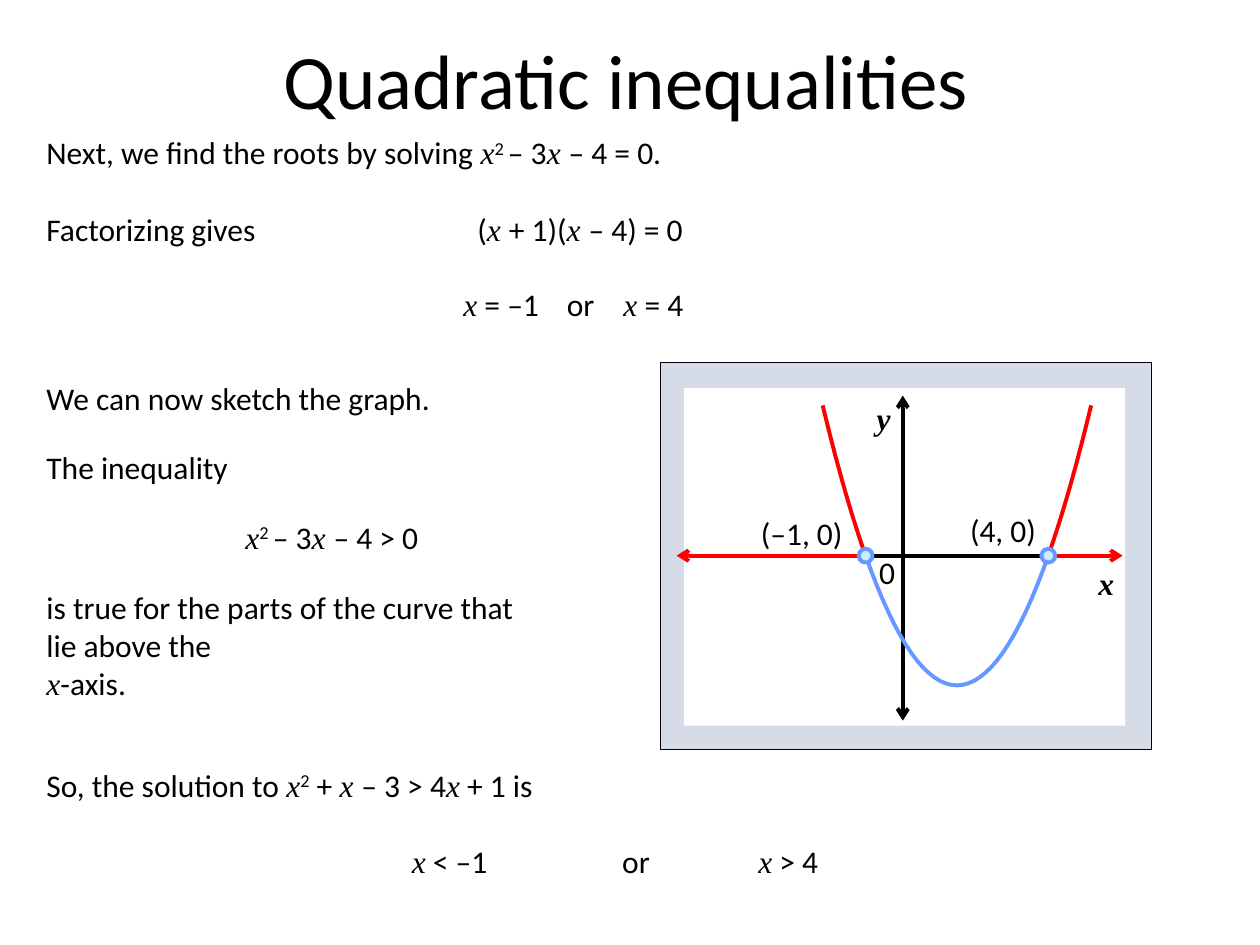
from lxml import etree
from pptx import Presentation
from pptx.dml.color import RGBColor
from pptx.enum.shapes import MSO_CONNECTOR, MSO_SHAPE
from pptx.enum.text import MSO_ANCHOR, PP_ALIGN
from pptx.oxml.ns import qn
from pptx.util import Inches, Pt

STRAIGHT = MSO_CONNECTOR.STRAIGHT
RECTANGLE, OVAL = MSO_SHAPE.RECTANGLE, MSO_SHAPE.OVAL
MIDDLE, CENTER = MSO_ANCHOR.MIDDLE, PP_ALIGN.CENTER

BLACK, WHITE, RED = "000000", "FFFFFF", "FF0000"
BLUE, PALE_BLUE, FRAME_GREY = "6699FF", "CCECFF", "D5DCE7"
STROKE = 2.25

# Content: "|" separates runs, x runs are variables, ^ marks a superscript
TITLE = "Quadratic inequalities"
TEXTS = [  # left, top, width, height, text
    (0.27, 1.01, 9.43, 0.5, "Next, we find the roots by solving |x|^2 |– 3|x |– 4 = 0."),
    (0.27, 1.62, 2.8, 0.5, "Factorizing gives"),
    (3.69, 1.62, 2.62, 0.5, "(|x |+ 1)(|x |– 4) = 0"),
    (3.58, 2.21, 0.9, 0.5, "x| = –1"),
    (4.4, 2.21, 0.5, 0.5, "or"),
    (4.85, 2.21, 0.9, 0.5, "x| = 4"),
    (0.27, 2.96, 4.69, 0.5, "We can now sketch the graph."),
    (0.27, 3.51, 4.57, 0.5, "The inequality"),
    (1.85, 4.06, 2.3, 0.5, "x|^2 |– 3|x |– 4 > 0"),
    (0.27, 4.62, 4.15, 1.3,
     "is true for the parts of the curve that lie above the\nx|-axis."),
    (0.27, 6.03, 6.02, 0.5, "So, the solution to |x|^2| + |x |– 3 > 4|x| + 1 is"),
    (3.17, 6.63, 1.1, 0.5, "x| < –1"),
    (4.84, 6.63, 0.5, 0.5, "or"),
    (5.92, 6.63, 0.91, 0.5, "x| > 4"),
]
GRAPH_LABELS = [  # left, top, width, height, text, bold
    (6.88, 4.34, 0.34, 0.4, "0", False),
    (6.86, 3.12, 0.31, 0.4, "y", True),
    (8.62, 4.43, 0.33, 0.4, "x", True),
    (5.94, 4.03, 0.92, 0.4, "(–1, 0)", False),
    (7.6, 4.01, 0.78, 0.4, "(4, 0)", False),
]

# Graph geometry
AXIS_LEFT, AXIS_RIGHT, AXIS_Y = 5.37, 8.91, 4.41
ROOTS = (6.87, 8.32)
CURVE_LEFT, CURVE_RIGHT, VERTEX_Y = 6.53, 8.66, 5.44
Y_AXIS_X, Y_AXIS_TOP, Y_AXIS_BOTTOM = 7.165, 3.14, 5.72
DOT = 0.11


def color(value):
    return RGBColor.from_string(value)


def write(frame, text, size=18, bold=False, align=None):
    frame.word_wrap = True
    for number, line in enumerate(text.split("\n")):
        para = frame.add_paragraph() if number else frame.paragraphs[0]
        para.alignment = align
        for piece in line.split("|"):
            span = para.add_run()
            span.text = piece.lstrip("^")
            variable = piece.strip() in ("x", "y")
            span.font.name = "Times New Roman" if variable else "Calibri"
            span.font.size = Pt(size)
            span.font.bold = bold
            span.font.italic = variable
            span.font.color.rgb = color(BLACK)
            if piece.startswith("^"):
                span.font._element.set("baseline", "30000")


def add_text(page, left, top, width, height, text, bold=False):
    box = page.shapes.add_textbox(*map(Inches, (left, top, width, height)))
    write(box.text_frame, text, bold=bold)


def style(shape, fill=None, line=None, weight=STROKE):
    shape.shadow.inherit = False
    if fill:
        shape.fill.solid()
        shape.fill.fore_color.rgb = color(fill)
    else:
        shape.fill.background()
    if line:
        shape.line.color.rgb = color(line)
        shape.line.width = Pt(weight)
    else:
        shape.line.fill.background()


def add_preset(page, kind, left, top, width, height, **look):
    style(page.shapes.add_shape(kind, *map(Inches, (left, top, width, height))), **look)


def add_line(page, x1, y1, x2, y2, line, arrows=False):
    connector = page.shapes.add_connector(STRAIGHT, *map(Inches, (x1, y1, x2, y2)))
    connector.line.color.rgb = color(line)
    connector.line.width = Pt(STROKE)
    if arrows:
        outline = connector.line._get_or_add_ln()
        for end in ("a:headEnd", "a:tailEnd"):
            etree.SubElement(outline, qn(end), type="arrow")
    etree.SubElement(connector._element.spPr, qn("a:effectLst"))


def add_curve(page, start, end, line, steps=32):
    """Draw the part of the parabola between two horizontal positions."""
    middle = sum(ROOTS) / 2
    steepness = (VERTEX_Y - AXIS_Y) / (ROOTS[1] - middle) ** 2
    points = []
    for step in range(steps + 1):
        x = start + (end - start) * step / steps
        points.append((Inches(x), Inches(VERTEX_Y - steepness * (x - middle) ** 2)))
    builder = page.shapes.build_freeform(*points[0])
    builder.add_line_segments(points[1:], close=False)
    style(builder.convert_to_shape(), line=line)


def main():
    deck = Presentation()
    deck.slide_width, deck.slide_height = Inches(10), Inches(7.5)
    page = deck.slides.add_slide(deck.slide_layouts[5])

    # Title
    title = page.shapes.title
    title.left, title.top, title.width, title.height = map(Inches, (0.47, 0, 9, 1.25))
    title.text_frame.vertical_anchor = MIDDLE
    write(title.text_frame, TITLE, size=44, align=CENTER)

    # Working
    for entry in TEXTS:
        add_text(page, *entry)

    # Graph frame
    add_preset(page, RECTANGLE, 5.24, 2.88, 3.9, 3.07,
               fill=FRAME_GREY, line=BLACK, weight=0.75)
    add_preset(page, RECTANGLE, 5.43, 3.08, 3.5, 2.68, fill=WHITE)

    # Axes: red where the inequality holds, black between the roots
    add_line(page, AXIS_LEFT, AXIS_Y, AXIS_RIGHT, AXIS_Y, RED, arrows=True)
    add_line(page, ROOTS[0], AXIS_Y, ROOTS[1], AXIS_Y, BLACK)
    add_line(page, Y_AXIS_X, Y_AXIS_BOTTOM, Y_AXIS_X, Y_AXIS_TOP, BLACK, arrows=True)

    # Parabola: red arms above the axis, blue below
    add_curve(page, CURVE_LEFT, ROOTS[0], RED)
    add_curve(page, ROOTS[1], CURVE_RIGHT, RED)
    add_curve(page, *ROOTS, BLUE)

    # Labels and open root markers
    for label in GRAPH_LABELS:
        add_text(page, *label)
    for root in ROOTS:
        add_preset(page, OVAL, root - DOT / 2, AXIS_Y - DOT / 2, DOT, DOT,
                   fill=PALE_BLUE, line=BLUE)

    deck.save("out.pptx")


if __name__ == "__main__":
    main()
